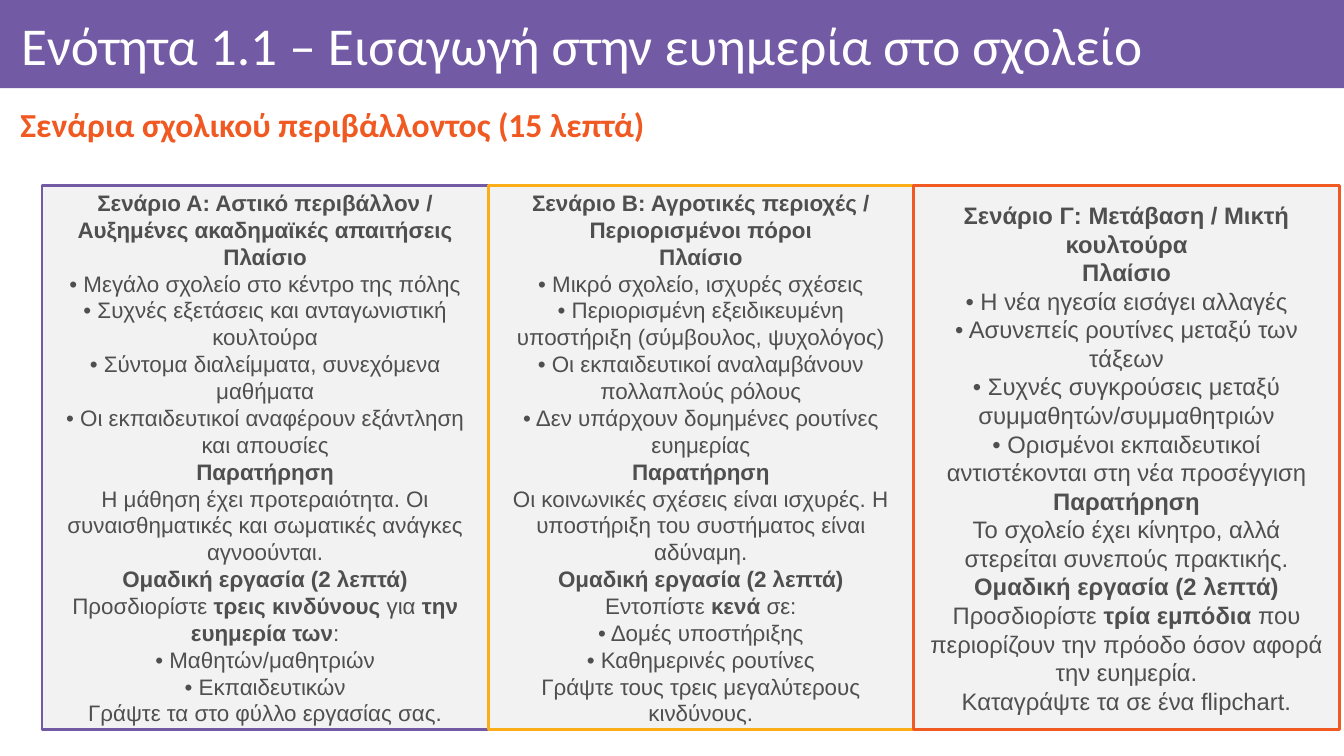
from pptx import Presentation
from pptx import util as u
from pptx.dml.color import RGBColor
from pptx.enum import shapes, text

EMU_PER_PX = 9525
COLORS = {
    "purple": "735AA5", "yellow": "FBAE17", "orange": "F05A22",
    "panel": "F2F2F2", "body": "4F4F50", "white": "FFFFFF",
}
PANEL_LEFT, PANEL_TOP, PANEL_HEIGHT = 40, 177, 518

# One string per paragraph; ** switches bold on and off.
SCENARIOS = [
    {"color": "purple", "width": 425, "size": 16, "paragraphs": [
        "**Σενάριο Α: Αστικό περιβάλλον / Αυξημένες ακαδημαϊκές απαιτήσεις**",
        "**Πλαίσιο**\n"
        "• Μεγάλο σχολείο στο κέντρο της πόλης\n"
        "• Συχνές εξετάσεις και ανταγωνιστική κουλτούρα\n"
        "• Σύντομα διαλείμματα, συνεχόμενα μαθήματα\n"
        "• Οι εκπαιδευτικοί αναφέρουν εξάντληση και απουσίες",
        "**Παρατήρηση**\n"
        "Η μάθηση έχει προτεραιότητα. Οι συναισθηματικές και σωματικές ανάγκες αγνοούνται.",
        "**Ομαδική εργασία (2 λεπτά)**\n"
        "Προσδιορίστε **τρεις κινδύνους **για **την ευημερία των**:\n"
        "• Μαθητών/μαθητριών\n"
        "• Εκπαιδευτικών",
        "Γράψτε τα στο φύλλο εργασίας σας.",
    ]},
    {"color": "yellow", "width": 405, "size": 16, "paragraphs": [
        "**Σενάριο Β: Αγροτικές περιοχές / Περιορισμένοι πόροι**",
        "**Πλαίσιο**\n"
        "• Μικρό σχολείο, ισχυρές σχέσεις\n"
        "• Περιορισμένη εξειδικευμένη υποστήριξη (σύμβουλος, ψυχολόγος)\n"
        "• Οι εκπαιδευτικοί αναλαμβάνουν πολλαπλούς ρόλους\n"
        "• Δεν υπάρχουν δομημένες ρουτίνες ευημερίας",
        "**Παρατήρηση**\n"
        "Οι κοινωνικές σχέσεις είναι ισχυρές. Η υποστήριξη του συστήματος είναι αδύναμη.",
        "**Ομαδική εργασία (2 λεπτά)**\n"
        "Εντοπίστε **κενά **σε:\n"
        "• Δομές υποστήριξης\n"
        "• Καθημερινές ρουτίνες",
        "Γράψτε τους τρεις μεγαλύτερους κινδύνους.",
    ]},
    {"color": "orange", "width": 406, "size": 17, "paragraphs": [
        "**Σενάριο Γ: Μετάβαση / Μικτή κουλτούρα**",
        "**Πλαίσιο**\n"
        "• Η νέα ηγεσία εισάγει αλλαγές\n"
        "• Ασυνεπείς ρουτίνες μεταξύ των τάξεων\n"
        "• Συχνές συγκρούσεις μεταξύ συμμαθητών/συμμαθητριών\n"
        "• Ορισμένοι εκπαιδευτικοί αντιστέκονται στη νέα προσέγγιση",
        "**Παρατήρηση**\n"
        "Το σχολείο έχει κίνητρο, αλλά στερείται συνεπούς πρακτικής.",
        "**Ομαδική εργασία (2 λεπτά)**\n"
        "Προσδιορίστε **τρία εμπόδια **που περιορίζουν την πρόοδο όσον αφορά την ευημερία.\n"
        "Καταγράψτε τα σε ένα flipchart.",
    ]},
]


def px(length):
    return u.Emu(length * EMU_PER_PX)


def rgb(name):
    return RGBColor.from_string(COLORS[name])


def style_font(font, name, size, color, bold=None):
    font.name = name
    font.size = u.Pt(size)
    font.color.rgb = rgb(color)
    font.bold = bold


def add_box(slide, left, top, width, height, fill, line=None):
    shape = slide.shapes.add_shape(
        shapes.MSO_SHAPE.RECTANGLE, px(left), px(top), px(width), px(height))
    shape.shadow.inherit = False
    shape.fill.solid()
    shape.fill.fore_color.rgb = rgb(fill)
    if line:
        shape.line.color.rgb = rgb(line)
        shape.line.width = u.Pt(2)
    else:
        shape.line.fill.background()
    return shape


def set_heading(shape, words, size, color, bold, alignment):
    """Fill a one-line heading, centred vertically in its box."""
    frame = shape.text_frame
    frame.word_wrap = True
    frame.auto_size = text.MSO_AUTO_SIZE.NONE
    frame.vertical_anchor = text.MSO_ANCHOR.MIDDLE
    frame.text = words
    paragraph = frame.paragraphs[0]
    paragraph.alignment = alignment
    paragraph.line_spacing = 0.9
    style_font(paragraph.font, "Calibri", size, color, bold)


def add_title(slide):
    bar = add_box(slide, 0, 0, 1280, 84, "purple")
    title = slide.shapes.title
    bar._element.addnext(title._element)
    title.left, title.top, title.width, title.height = px(10), px(8), px(1254), px(75)
    set_heading(title, "Ενότητα 1.1 – Εισαγωγή στην ευημερία στο σχολείο",
                38, "white", False, text.PP_ALIGN.LEFT)
    frame = title.text_frame
    frame.margin_left = px(10)
    frame.margin_top = frame.margin_right = frame.margin_bottom = px(6)


def add_subtitle(slide):
    subtitle = slide.shapes.add_textbox(px(10), px(92), px(1254), px(58))
    set_heading(subtitle, "Σενάρια σχολικού περιβάλλοντος (15 λεπτά)",
                24, "orange", True, text.PP_ALIGN.JUSTIFY)


def add_marked_text(paragraph, marked):
    """Write runs and line breaks, with ** switching bold."""
    for part_index, part in enumerate(marked.split("**")):
        for line_index, line in enumerate(part.split("\n")):
            if line_index:
                paragraph.add_line_break()
            if line:
                run = paragraph.add_run()
                run.text = line
                run.font.bold = part_index % 2 == 1


def add_scenario(slide, left, scenario):
    panel = add_box(slide, left, PANEL_TOP, scenario["width"], PANEL_HEIGHT,
                    "panel", scenario["color"])
    frame = panel.text_frame
    frame.word_wrap = True
    frame.vertical_anchor = text.MSO_ANCHOR.MIDDLE
    for index, marked in enumerate(scenario["paragraphs"]):
        paragraph = frame.add_paragraph() if index else frame.paragraphs[0]
        paragraph.alignment = text.PP_ALIGN.CENTER
        style_font(paragraph.font, "Arial", scenario["size"], "body")
        add_marked_text(paragraph, marked)


def main():
    presentation = Presentation()
    presentation.slide_width, presentation.slide_height = px(1280), px(720)
    slide = presentation.slides.add_slide(presentation.slide_layouts[5])
    add_title(slide)
    add_subtitle(slide)
    left = PANEL_LEFT
    for scenario in SCENARIOS:
        add_scenario(slide, left, scenario)
        left += scenario["width"]
    presentation.save("out.pptx")


if __name__ == "__main__":
    main()
